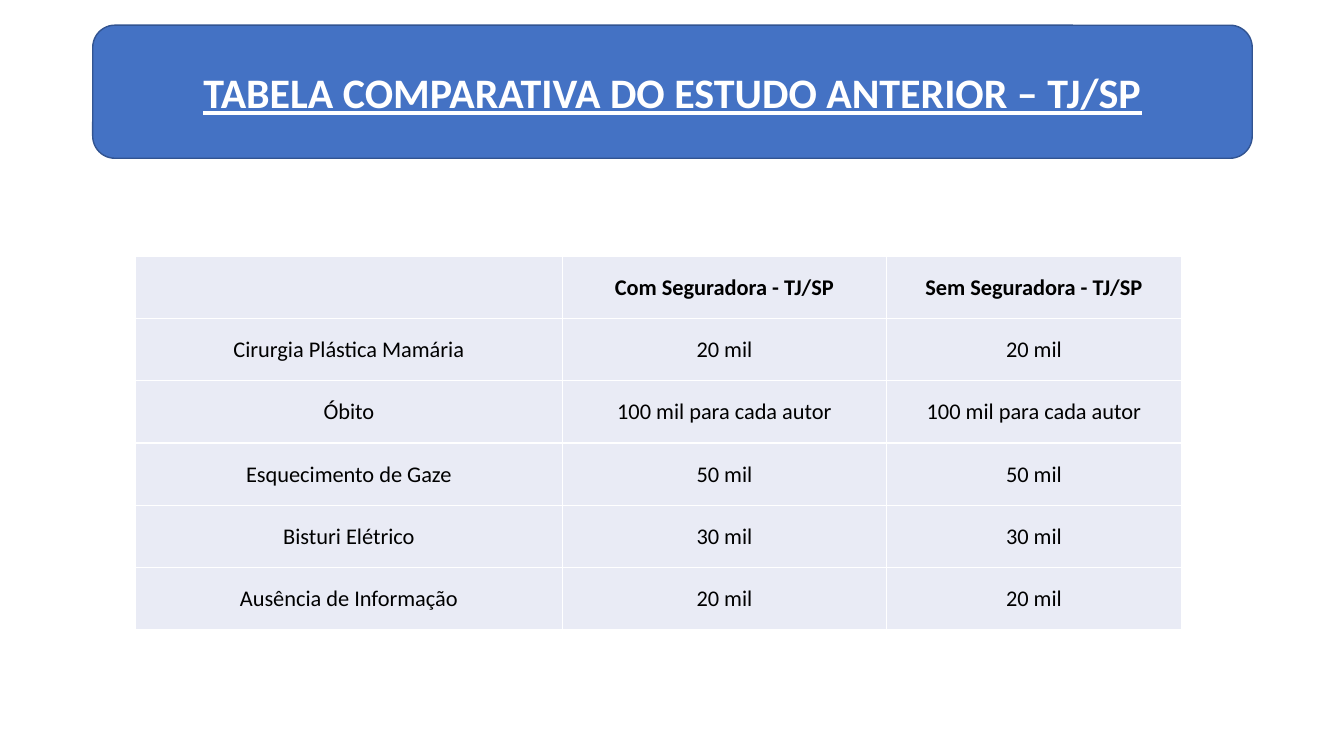
"""Build the slide comparing TJ/SP compensation with and without an insurer."""
from dataclasses import dataclass

from lxml.etree import SubElement
from pptx import Presentation
from pptx.dml.color import RGBColor
from pptx.enum.shapes import MSO_SHAPE
from pptx.enum.text import MSO_ANCHOR, PP_ALIGN
from pptx.oxml.ns import qn
from pptx.util import Inches, Pt


@dataclass(frozen=True)
class Theme:
    font: str = "Calibri"
    banner: str = "4472C4"
    banner_line: str = "325491"
    cell: str = "E9EBF5"
    white: str = "FFFFFF"
    black: str = "000000"
    title_size: int = 30
    cell_size: int = 16
    line_width: int = 1


theme = Theme()


def add_centred_run(text_frame, text, size, color, bold):
    paragraph = text_frame.paragraphs[0]
    paragraph.alignment = PP_ALIGN.CENTER
    run = paragraph.add_run()
    run.text = text
    run.font.name = theme.font
    run.font.size = Pt(size)
    run.font.bold = bold
    run.font.color.rgb = RGBColor.from_string(color)
    return run


def add_cell_borders(cell):
    properties = cell._tc.get_or_add_tcPr()
    for side in ("a:lnL", "a:lnR", "a:lnT", "a:lnB"):
        border = SubElement(properties, qn(side), w=str(Pt(theme.line_width)))
        fill = SubElement(border, qn("a:solidFill"))
        SubElement(fill, qn("a:srgbClr"), val=theme.white)


presentation = Presentation()
presentation.slide_width = Inches(13.33)
presentation.slide_height = Inches(7.5)
slide = presentation.slides.add_slide(presentation.slide_layouts[6])

banner = slide.shapes.add_shape(
    MSO_SHAPE.ROUNDED_RECTANGLE, Inches(0.92), Inches(0.25), Inches(11.5), Inches(1.32)
)
banner.shadow.inherit = False
banner.fill.solid()
banner.fill.fore_color.rgb = RGBColor.from_string(theme.banner)
banner.line.color.rgb = RGBColor.from_string(theme.banner_line)
banner.line.width = Pt(theme.line_width)
banner.text_frame.word_wrap = True
banner.text_frame.vertical_anchor = MSO_ANCHOR.MIDDLE
title = add_centred_run(
    banner.text_frame,
    "TABELA COMPARATIVA DO ESTUDO ANTERIOR – TJ/SP",
    theme.title_size,
    theme.white,
    True,
)
title.font.underline = True

comparison = [
    ("", "Com Seguradora - TJ/SP", "Sem Seguradora - TJ/SP"),
    ("Cirurgia Plástica Mamária", "20 mil", "20 mil"),
    ("Óbito", "100 mil para cada autor", "100 mil para cada autor"),
    ("Esquecimento de Gaze", "50 mil", "50 mil"),
    ("Bisturi Elétrico", "30 mil", "30 mil"),
    ("Ausência de Informação", "20 mil", "20 mil"),
]
column_widths = (4.24, 3.21, 2.93)

table = slide.shapes.add_table(
    len(comparison), len(column_widths), Inches(1.34), Inches(2.54), Inches(10.38), Inches(3.71)
).table
table.horz_banding = False
for column, width in zip(table.columns, column_widths):
    column.width = Inches(width)

for row_index, row in enumerate(comparison):
    for column_index, text in enumerate(row):
        cell = table.cell(row_index, column_index)
        add_cell_borders(cell)
        cell.fill.solid()
        cell.fill.fore_color.rgb = RGBColor.from_string(theme.cell)
        cell.vertical_anchor = MSO_ANCHOR.MIDDLE
        cell.margin_left = cell.margin_right = cell.margin_top = Inches(0.01)
        cell.margin_bottom = 0
        if text:
            add_centred_run(cell.text_frame, text, theme.cell_size, theme.black, row_index == 0)

presentation.save("out.pptx")
